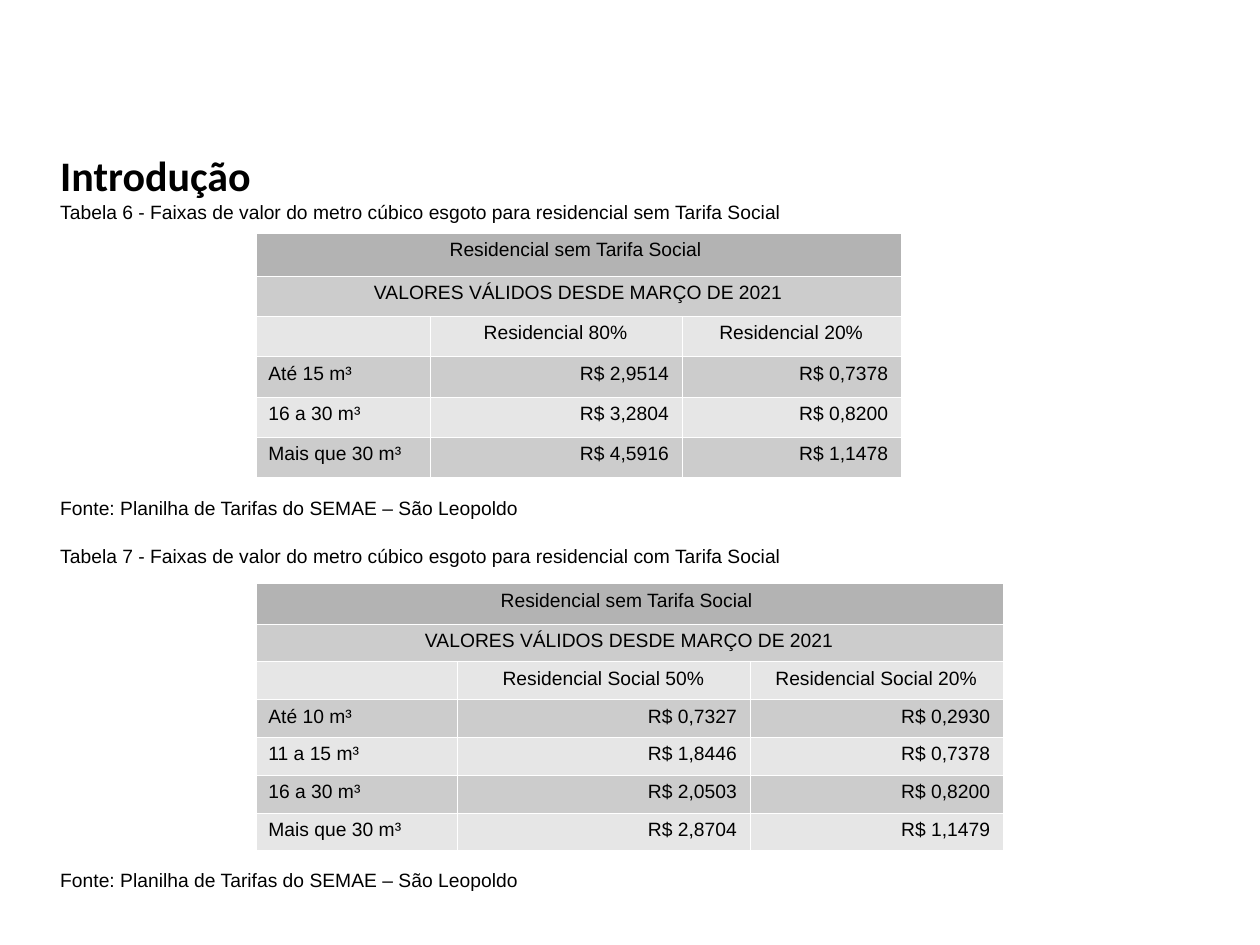
"""Build the slide with two sewage tariff tables."""
from dataclasses import dataclass

import lxml.etree
import pptx
import pptx.dml.color
import pptx.enum.text
import pptx.oxml.ns
import pptx.presentation
import pptx.slide
import pptx.table
import pptx.text.text
import pptx.util

SLIDE_WIDTH = pptx.util.Inches(10)
SLIDE_HEIGHT = pptx.util.Inches(7.5)

BLACK = pptx.dml.color.RGBColor(0x00, 0x00, 0x00)
HEADING_GRAY = pptx.dml.color.RGBColor(0xB3, 0xB3, 0xB3)
DARK_BAND = pptx.dml.color.RGBColor(0xCC, 0xCC, 0xCC)
LIGHT_BAND = pptx.dml.color.RGBColor(0xE6, 0xE6, 0xE6)
BORDER_COLOR = "FFFFFF"
BORDER_WIDTH = pptx.util.Pt(0.06)
BODY_SIZE = pptx.util.Pt(11)

ALIGN = pptx.enum.text.PP_ALIGN
HEADING = "Residencial sem Tarifa Social "
VALIDITY = "VALORES VÁLIDOS DESDE MARÇO DE 2021"
SOURCE = "Fonte: Planilha de Tarifas do SEMAE – São Leopoldo"
TABLE_LEFT = 20.3
SPANNING_ROWS = 2
LABEL_ROW = 2


@dataclass(frozen=True)
class Line:
    """A line of body text and the points of space before it."""
    text: str
    space_before: float = 0
    align: ALIGN = ALIGN.JUSTIFY
    font: str = "Arial"
    size: float = 11
    bold: bool = False
    spacing: float = 1.0


@dataclass(frozen=True)
class Tariff:
    """A tariff table, with lengths in percent of the slide's size."""
    top: float
    columns: tuple[float, ...]
    heading_height: float
    row_height: float
    rows: tuple[tuple[str, ...], ...]


LINES = (
    Line("Introdução", 0, ALIGN.LEFT, "Calibri", 24, True, 0.9),
    Line("Tabela 6 - Faixas de valor do metro cúbico esgoto para residencial sem Tarifa Social"),
    Line(SOURCE, 156),
    Line("Tabela 7 - Faixas de valor do metro cúbico esgoto para residencial com Tarifa Social", 14.2),
    Line(SOURCE, 172),
)

TARIFFS = (
    Tariff(24.67, (13.8, 20, 17.4), 4.53, 4.27, (
        ("", "Residencial 80%", "Residencial 20%"),
        ("Até 15 m³", "R$ 2,9514", "R$ 0,7378"),
        ("16 a 30 m³", "R$ 3,2804", "R$ 0,8200"),
        ("Mais que 30 m³", "R$ 4,5916", "R$ 1,1478"),
    )),
    Tariff(61.73, (16, 23.2, 20.1), 4.27, 4, (
        ("", "Residencial Social 50%", "Residencial Social 20%"),
        ("Até 10 m³", "R$ 0,7327", "R$ 0,2930"),
        ("11 a 15 m³", "R$ 1,8446", "R$ 0,7378"),
        ("16 a 30 m³", "R$ 2,0503", "R$ 0,8200"),
        ("Mais que 30 m³", "R$ 2,8704", "R$ 1,1479"),
    )),
)


def across(percent: float) -> int:
    """Return a share of the slide's width."""
    return round(SLIDE_WIDTH * percent / 100)


def down(percent: float) -> int:
    """Return a share of the slide's height."""
    return round(SLIDE_HEIGHT * percent / 100)


def add_body(slide: pptx.slide.Slide, lines: tuple[Line, ...]) -> None:
    """Add the title, captions and sources as one text box."""
    body = slide.shapes.add_textbox(across(3.8), down(15.73), across(85), down(84.27))
    frame = body.text_frame
    frame.word_wrap = True
    frame.text = "\n".join(line.text for line in lines)
    for paragraph, line in zip(frame.paragraphs, lines):
        paragraph.alignment = line.align
        paragraph.line_spacing = line.spacing
        paragraph.space_before = pptx.util.Pt(line.space_before)
        font = paragraph.runs[0].font
        font.name, font.size, font.bold = line.font, pptx.util.Pt(line.size), line.bold
        font.color.rgb = BLACK


def add_borders(cell: pptx.table._Cell) -> None:
    """Give a cell thin borders on its four sides, ahead of its fill."""
    properties = cell._tc.get_or_add_tcPr()
    qn = pptx.oxml.ns.qn
    for position, side in enumerate(("a:lnL", "a:lnR", "a:lnT", "a:lnB")):
        border = lxml.etree.Element(qn(side), w=str(BORDER_WIDTH))
        fill = lxml.etree.SubElement(border, qn("a:solidFill"))
        lxml.etree.SubElement(fill, qn("a:srgbClr"), val=BORDER_COLOR)
        properties.insert(position, border)


def band_color(row: int) -> pptx.dml.color.RGBColor:
    """Return the fill of a table row."""
    if row == 0:
        return HEADING_GRAY
    return DARK_BAND if row % 2 else LIGHT_BAND


def cell_alignment(row: int, column: int) -> ALIGN:
    """Centre the headings, and put values to the right of their labels."""
    if row <= LABEL_ROW:
        return ALIGN.CENTER
    return ALIGN.RIGHT if column else ALIGN.LEFT


def fill_cell(cell: pptx.table._Cell, text: str, row: int, column: int) -> None:
    """Write and format one cell."""
    cell.fill.solid()
    cell.fill.fore_color.rgb = band_color(row)
    add_borders(cell)
    cell.text_frame.text = text
    paragraph = cell.text_frame.paragraphs[0]
    paragraph.alignment = cell_alignment(row, column)
    for run in paragraph.runs:
        run.font.name, run.font.size = "Arial", BODY_SIZE
        run.font.color.rgb = BLACK
    if not text:
        end = lxml.etree.SubElement(paragraph._p, pptx.oxml.ns.qn("a:endParaRPr"))
        end.set("sz", str(round(BODY_SIZE.pt * 100)))


def add_tariff(slide: pptx.slide.Slide, tariff: Tariff) -> None:
    """Add one tariff table with its two spanning headings."""
    blanks = ("",) * (len(tariff.columns) - 1)
    rows = ((HEADING, *blanks), (VALIDITY, *blanks), *tariff.rows)
    heights = (tariff.heading_height,) + (tariff.row_height,) * (len(rows) - 1)
    table = slide.shapes.add_table(
        len(rows), len(tariff.columns), across(TABLE_LEFT), down(tariff.top),
        across(sum(tariff.columns)), down(sum(heights)),
    ).table
    table.first_row = table.horz_banding = False
    for column, width in zip(table.columns, tariff.columns):
        column.width = across(width)
    for row, height in zip(table.rows, heights):
        row.height = down(height)
    for row, texts in enumerate(rows):
        for column, text in enumerate(texts):
            fill_cell(table.cell(row, column), text, row, column)
    for row in range(SPANNING_ROWS):
        table.cell(row, 0).merge(table.cell(row, len(tariff.columns) - 1))


def main() -> None:
    """Build and save the presentation."""
    presentation = pptx.Presentation()
    presentation.slide_width, presentation.slide_height = SLIDE_WIDTH, SLIDE_HEIGHT
    slide = presentation.slides.add_slide(presentation.slide_layouts[6])
    add_body(slide, LINES)
    for tariff in TARIFFS:
        add_tariff(slide, tariff)
    presentation.save("out.pptx")


if __name__ == "__main__":
    main()
